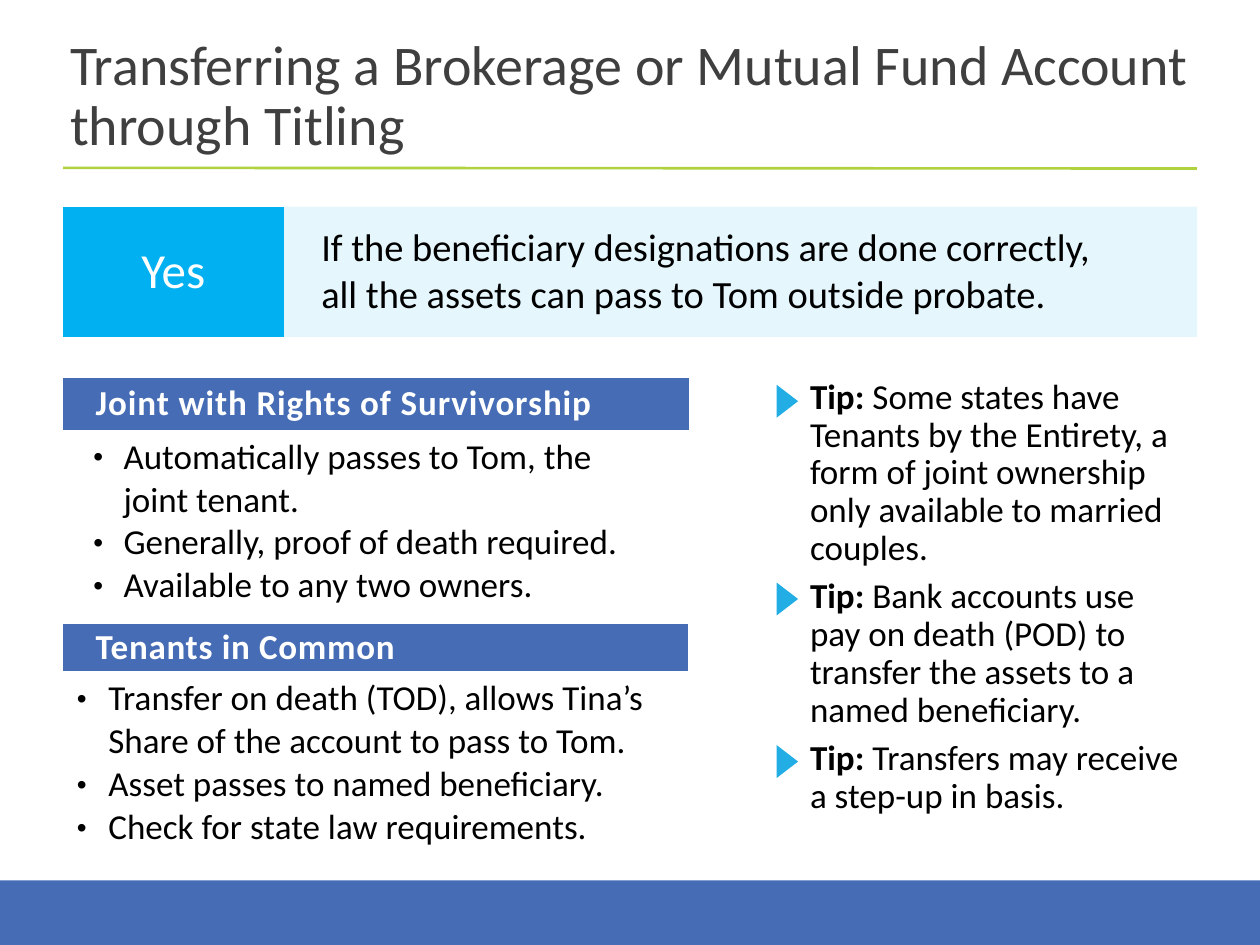
import pptx
import pptx.util
import pptx.dml.color
import pptx.enum.shapes
import pptx.enum.text
from lxml import etree

Pt = pptx.util.Pt
SHAPE = pptx.enum.shapes.MSO_SHAPE
ALIGN = pptx.enum.text.PP_ALIGN
ANCHOR = pptx.enum.text.MSO_ANCHOR
NS = "{http://schemas.openxmlformats.org/drawingml/2006/main}"
PLAIN = "{2D5ABB26-0587-4C30-8999-92F81FD0307C}"
FACE = "Calibri"
HUES = {"band": "456CB4", "rule": "B0D23F", "sky": "00B0F0", "mark": "22ADE5",
        "title": "3F3F3F", "ink": "000000", "white": "FFFFFF"}

TITLE = "Transferring a Brokerage or Mutual Fund Account through Titling"
ANSWER = ("Yes", "If the beneficiary designations are done correctly,\v"
                 "all the assets can pass to Tom outside probate.")
JOINT = {
    "head": "Joint with Rights of Survivorship", "track": 50,
    "top": 216, "wide": 358, "rows": (29.5, 103, 39.5),
    "indent": (27.4, -17.3), "pad": (7.2, 3.6, 7.2, 3.6),
    "items": ("Automatically passes to Tom, the\vjoint tenant.",
              "Generally, proof of death required.",
              "Available to any two owners."),
}
COMMON = {
    "head": "Tenants in Common", "track": 40,
    "top": 356.5, "wide": 357, "rows": (27, 109, 37),
    "indent": (18.7, -18), "pad": (7.2, 3.6, 10.8, 10.8),
    "items": ("Transfer on death (TOD), allows Tina’s\vShare of the account to pass to Tom.",
              "Asset passes to named beneficiary.",
              "Check for state law requirements."),
}
# (top of the marker, text)
TIPS = (
    (223.2, "Some states have Tenants by the Entirety, a form of joint ownership "
            "only available to married couples."),
    (336.2, "Bank accounts use pay on death (POD) to transfer the assets to a\vnamed beneficiary."),
    (429.1, "Transfers may receive a step-up in basis."),
)
LEFT, WIDE = 36, 648


def rgb(hue):
    return pptx.dml.color.RGBColor.from_string(HUES[hue])


def style(para, size, hue, bold=False, track=0):
    for run in para.runs:
        font = run.font
        font.name, font.size, font.bold = FACE, Pt(size), bold
        font.color.rgb = rgb(hue)
        if track:
            font._element.set("spc", str(track))


def indent(para, left, first=0):
    props = para._p.get_or_add_pPr()
    props.set("marL", str(Pt(left)))
    props.set("indent", str(Pt(first)))
    return props


def bullet(para, left, first):
    props = indent(para, left, first)
    etree.SubElement(props, NS + "buSzPct").set("val", "80000")
    etree.SubElement(props, NS + "buFont").set("typeface", "Arial")
    etree.SubElement(props, NS + "buChar").set("char", "•")


def paint(shape, hue):
    shape.shadow.inherit = False
    shape.fill.solid()
    shape.fill.fore_color.rgb = rgb(hue)
    shape.line.fill.background()


def grid(slide, top, cols, rows):
    """Add a table without style, borders or fill."""
    frame = slide.shapes.add_table(len(rows), len(cols), Pt(LEFT), Pt(top),
                                   Pt(sum(cols)), Pt(sum(rows)))
    table = frame.table
    table.first_row = table.horz_banding = False
    table._tbl.tblPr.find(NS + "tableStyleId").text = PLAIN
    for col, size in zip(table.columns, cols):
        col.width = Pt(size)
    for row, size in zip(table.rows, rows):
        row.height = Pt(size)
    for cell in table.iter_cells():
        cell.fill.background()
    return table


def pad(cell, left, top, right, bottom):
    cell.margin_left, cell.margin_top = Pt(left), Pt(top)
    cell.margin_right, cell.margin_bottom = Pt(right), Pt(bottom)


def flood(cell, hue, alpha=None):
    cell.fill.solid()
    cell.fill.fore_color.rgb = rgb(hue)
    cell.vertical_anchor = ANCHOR.MIDDLE
    if alpha:
        tint = cell._tc.tcPr.find(f"{NS}solidFill/{NS}srgbClr")
        etree.SubElement(tint, NS + "alpha").set("val", str(alpha * 1000))


def write_box(shapes, left, top, width, height):
    frame = shapes.add_textbox(Pt(left), Pt(top), Pt(width), Pt(height)).text_frame
    frame.word_wrap = True
    return frame


def add_title(slide):
    frame = write_box(slide.shapes, 33, 18, 684, 90)
    frame.text = TITLE
    para = frame.paragraphs[0]
    para.line_spacing = Pt(34)
    style(para, 32, "title")
    rule = slide.shapes.add_connector(pptx.enum.shapes.MSO_CONNECTOR.STRAIGHT,
                                      Pt(LEFT), Pt(95.9), Pt(LEFT + WIDE), Pt(96.3))
    rule.line.color.rgb = rgb("rule")
    rule.line.width = Pt(1.5)
    etree.SubElement(rule._element.spPr, NS + "effectLst")


def add_answer(slide):
    word, note = grid(slide, 118, (126, WIDE - 126), (74.5,)).iter_cells()
    flood(word, "sky")
    flood(note, "sky", 10)
    pad(note, 21.6, 10.8, 10.8, 10.8)
    for cell, text, size, hue in zip((word, note), ANSWER, (28, 22), ("white", "ink")):
        cell.text_frame.text = text
        style(cell.text_frame.paragraphs[0], size, hue)
    word.text_frame.paragraphs[0].alignment = ALIGN.CENTER


def add_panel(slide, panel):
    table = grid(slide, panel["top"], (panel["wide"],), panel["rows"])
    head, body = table.cell(0, 0), table.cell(1, 0)
    flood(head, "band")
    pad(head, 0, 0, 0, 0)
    head.text_frame.text = panel["head"]
    para = head.text_frame.paragraphs[0]
    indent(para, 18.7)
    style(para, 20, "white", True, panel["track"])
    pad(body, *panel["pad"])
    body.text_frame.text = "\n".join(panel["items"])
    for para in body.text_frame.paragraphs:
        bullet(para, *panel["indent"])
        style(para, 20, "ink")


def add_tips(slide):
    group = slide.shapes.add_group_shape().shapes
    frame = write_box(group, 446.4, 213.1, 237.6, 272)
    frame.text = "\n".join(text for _, text in TIPS)
    for num, (para, (top, text)) in enumerate(zip(frame.paragraphs, TIPS)):
        para.text = "Tip: "
        indent(para, 9.4)
        para.line_spacing = 0.9
        para.space_before = Pt(6 if num else 0)
        style(para, 20, "ink", True)
        lead = len(para.runs)
        for part, line in enumerate(text.split("\v")):
            if part:
                para.add_line_break()
            para.add_run().text = line
        style(para, 20, "ink")
        for run in para.runs[:lead]:
            run.font.bold = True
        mark = group.add_shape(SHAPE.ISOSCELES_TRIANGLE, Pt(440.6), Pt(top), Pt(18.7), Pt(12.2))
        mark.rotation = 90
        paint(mark, "mark")


def main():
    deck = pptx.Presentation()
    deck.slide_width, deck.slide_height = Pt(720), Pt(540)
    slide = deck.slides.add_slide(deck.slide_layouts[6])
    foot = slide.shapes.add_shape(SHAPE.RECTANGLE, 0, Pt(503), Pt(720), Pt(37))
    paint(foot, "band")
    add_title(slide)
    add_answer(slide)
    add_panel(slide, JOINT)
    add_tips(slide)
    add_panel(slide, COMMON)
    deck.save("out.pptx")


if __name__ == "__main__":
    main()
